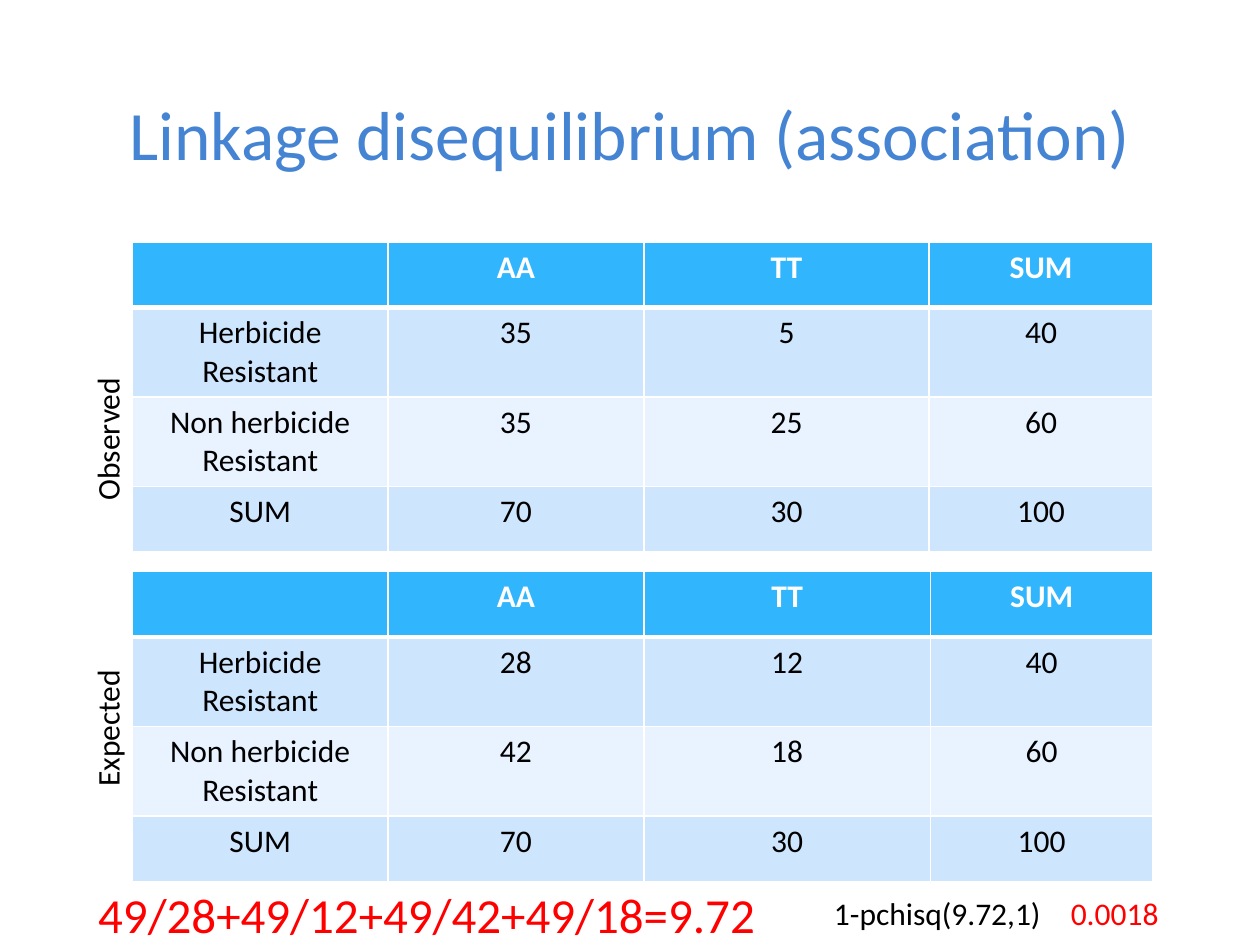
from dataclasses import dataclass

import pptx
import pptx.dml.color
import pptx.enum.text
import pptx.oxml
import pptx.oxml.ns
import pptx.util

COLS, ROWS = 100, 75  # grid of the slide
WIDE, HIGH = pptx.util.Inches(10), pptx.util.Inches(7.5)
FONT = "Calibri"
BLACK, WHITE, RED, BLUE = "000000", "FFFFFF", "FF0000", "4584D3"
HEAD, BANDS = "31B6FD", ("CEE5FE", "E8F3FF")
ALIGN = pptx.enum.text.PP_ALIGN


@dataclass
class Box:
    left: float
    top: float
    width: float
    height: float


@dataclass
class Note:
    text: str
    box: Box
    size: float = 18
    color: str = BLACK
    align: ALIGN = ALIGN.LEFT
    turn: int = 0
    wrap: bool = True


@dataclass
class Count:
    """A table of counts by trait and allele."""
    box: Box
    widths: tuple
    trait: tuple
    other: tuple


LABELS = ("Herbicide Resistant", "Non herbicide\nResistant", "SUM")
TITLE = Note("Linkage disequilibrium (association)", Box(5, 3.7, 90, 13.7),
             39.6, BLUE, ALIGN.CENTER)
TABLES = (
    Count(Box(10.5, 19.2, 81, 20.8), (20.3, 20.3, 22.65, 17.75), (35, 5), (35, 25)),
    Count(Box(10.5, 45.35, 81, 20.8), (20.3, 20.3, 22.75, 17.65), (28, 12), (42, 18)),
)
NOTES = (
    Note("49/28+49/12+49/42+49/18=9.72", Box(1.1, 69.7, 65.5, 5.7), 28, RED, ALIGN.CENTER),
    Note("1-pchisq(9.72,1)", Box(65.2, 70.5, 20.2, 4)),
    Note("0.0018", Box(84, 70.5, 9.1, 4), color=RED, wrap=False),
    Note("Observed", Box(-1.6, 28.6, 20.2, 4), turn=270),
    Note("Expected", Box(-1.6, 55.8, 20.2, 4), align=ALIGN.CENTER, turn=270),
)


def span(cols: float) -> int:
    return round(WIDE * cols / COLS)


def drop(rows: float) -> int:
    return round(HIGH * rows / ROWS)


def place(box: Box) -> tuple:
    return span(box.left), drop(box.top), span(box.width), drop(box.height)


def paint(code: str) -> pptx.dml.color.RGBColor:
    return pptx.dml.color.RGBColor.from_string(code)


def write(frame, text: str, size: float, color: str, align: ALIGN, bold: bool = False) -> None:
    frame.text = text
    look = {"name": FONT, "size": pptx.util.Pt(size), "bold": bold}
    for para in frame.paragraphs:
        para.alignment = align
        for run in para.runs:
            for key, value in look.items():
                setattr(run.font, key, value)
            run.font.color.rgb = paint(color)


def edge(cell, head: bool, under: bool) -> None:
    """Draw white cell borders, with a thick rule below the header."""
    props = cell._tc.get_or_add_tcPr()
    thick = {"L": 1, "R": 1, "T": 3 if under else 1, "B": 3 if head else 1}
    for spot, (side, width) in enumerate(thick.items()):
        props.insert(spot, pptx.oxml.parse_xml(
            f'<a:ln{side} {pptx.oxml.ns.nsdecls("a")} w="{pptx.util.Pt(width)}">'
            f'<a:solidFill><a:srgbClr val="{WHITE}"/></a:solidFill></a:ln{side}>'))


def tabulate(slide, count: Count) -> None:
    sums = tuple(map(sum, zip(count.trait, count.other)))
    body = [(name, *pair, sum(pair))
            for name, pair in zip(LABELS, (count.trait, count.other, sums))]
    grid = [("", "AA", "TT", "SUM"), *body]
    table = slide.shapes.add_table(len(grid), len(grid[0]), *place(count.box)).table
    for col, width in zip(table.columns, count.widths):
        col.width = span(width)
    for r, line in enumerate(grid):
        head = r == 0
        for c, value in enumerate(line):
            cell = table.cell(r, c)
            cell.fill.solid()
            cell.fill.fore_color.rgb = paint(HEAD if head else BANDS[(r - 1) % 2])
            edge(cell, head, r == 1)
            write(cell.text_frame, str(value), 18, WHITE if head else BLACK,
                  ALIGN.CENTER, head)


def jot(slide, note: Note) -> None:
    shape = slide.shapes.add_textbox(*place(note.box))
    shape.rotation = note.turn
    shape.text_frame.word_wrap = note.wrap
    write(shape.text_frame, note.text, note.size, note.color, note.align)


def main() -> None:
    deck = pptx.Presentation()
    deck.slide_width, deck.slide_height = WIDE, HIGH
    slide = deck.slides.add_slide(deck.slide_layouts[5])
    title = slide.shapes.title
    spots = dict(zip(("left", "top", "width", "height"), place(TITLE.box)))
    for key, value in spots.items():
        setattr(title, key, value)
    title.text_frame.vertical_anchor = pptx.enum.text.MSO_ANCHOR.MIDDLE
    write(title.text_frame, TITLE.text, TITLE.size, TITLE.color, TITLE.align)
    for count in TABLES:
        tabulate(slide, count)
    for note in NOTES:
        jot(slide, note)
    deck.save("out.pptx")


if __name__ == "__main__":
    main()
